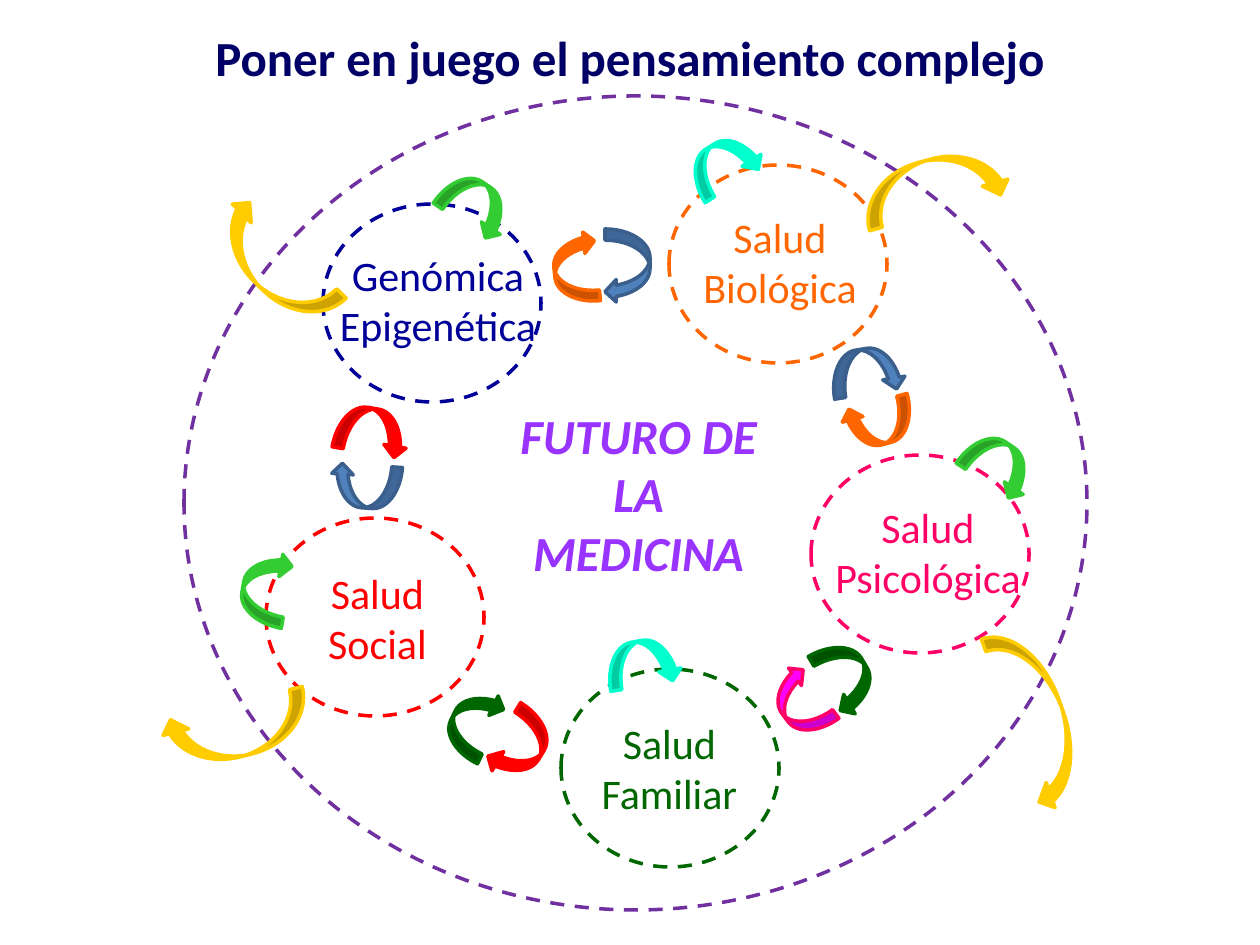
from dataclasses import dataclass

from pptx import Presentation
from pptx.dml.color import RGBColor
from pptx.enum.dml import MSO_LINE_DASH_STYLE as Dash
from pptx.enum.shapes import MSO_SHAPE as Shape
from pptx.enum.text import MSO_ANCHOR as Anchor, PP_ALIGN as Align
from pptx.util import Emu, Pt

PX = 914400 / 126


@dataclass(frozen=True)
class Theme:
    font: str = "Calibri"
    label_size: int = 24
    heading_size: int = 28
    line_width: int = 2
    title: str = "000066"
    center: str = "9933FF"
    outer: str = "7030A0"
    white: str = "FFFFFF"
    navy: str = "000099"
    orange: str = "FF6600"
    pink: str = "FF0066"
    red: str = "FF0000"
    dark_green: str = "006600"
    green: str = "33CC33"
    magenta: str = "FF00FF"
    blue: str = "4F81BD"
    blue_edge: str = "3A5F8C"
    cyan: str = "00FFCC"
    yellow: str = "FFCC00"


T = Theme()

# Health areas: lines, colour, circle corner, label box
CIRCLE = (218, 198)
AREAS = [
    (("Genómica", "Epigenética"), T.navy, (323, 204), (326, 243, 224, 115)),
    (("Salud", "Biológica"), T.orange, (669, 165), (690, 205, 180, 115)),
    (("Salud", "Psicológica"), T.pink, (811, 455), (822, 495, 212, 115)),
    (("Salud", "Social"), T.red, (266, 518), (315, 561, 125, 115)),
    (("Salud", "Familiar"), T.dark_green, (561, 669), (588, 711, 163, 115)),
]

# Arrows by size: left, top, rotation, fill, line
ARROWS = {
    # Outgoing half of each exchange, and the loops on the circles
    (45, 74): [
        (498, 709, 31.5, T.red, T.red),
        (824, 640, 329.4, T.dark_green, T.dark_green),
        (845, 334, 260.6, T.blue, T.blue_edge),
        (605, 229, 0, T.blue, T.blue_edge),
        (350, 394, 279.9, T.red, T.red),
        (454, 168, 303.8, T.green, T.green),
        (977, 428, 303.8, T.green, T.green),
        (243, 551, 189.9, T.green, T.green),
        (702, 127, 237.8, T.cyan, T.cyan),
        (621, 626, 260.2, T.cyan, T.cyan),
    ],
    # Returning half of each exchange
    (43, 71): [
        (452, 687, 205.7, T.dark_green, T.dark_green),
        (779, 667, 143.6, T.magenta, T.pink),
        (857, 388, 74.8, T.orange, T.orange),
        (554, 232, 174.2, T.orange, T.orange),
        (344, 451, 94.1, T.blue, T.blue_edge),
    ],
    # Arrows that leave the outer circle
    (53, 149): [
        (248, 190, 134.7, T.yellow, T.yellow),
        (210, 656, 75.8, T.yellow, T.yellow),
        (908, 111, 254.7, T.yellow, T.yellow),
    ],
    (53, 186): [(1011, 625, 340.5, T.yellow, T.yellow)],
}


def emu(*lengths):
    return [Emu(round(n * PX)) for n in lengths]


def rgb(color):
    return RGBColor.from_string(color)


def add_shape(slide, kind, box, fill=None, line=None):
    sp = slide.shapes.add_shape(kind, *emu(*box))
    sp.shadow.inherit = False
    if fill:
        sp.fill.solid()
        sp.fill.fore_color.rgb = rgb(fill)
    else:
        sp.fill.background()
    if line:
        sp.line.color.rgb = rgb(line)
        sp.line.width = Pt(T.line_width)
    else:
        sp.line.fill.background()
    return sp


def add_dashed_ellipse(slide, box, color):
    add_shape(slide, Shape.OVAL, box, line=color).line.dash_style = Dash.DASH


def add_arrow(slide, box, rotation, fill, line):
    add_shape(slide, Shape.CURVED_LEFT_ARROW, box, fill, line).rotation = rotation


def write(sp, lines, size, color, align=Align.CENTER, wrap=False, bold=False, italic=False):
    tf = sp.text_frame
    tf.word_wrap = wrap
    tf.vertical_anchor = Anchor.TOP
    tf.text = "\n".join(lines)
    for p in tf.paragraphs:
        p.alignment = align
        p.font.name = T.font
        p.font.size = Pt(size)
        p.font.bold = bold
        p.font.italic = italic
        p.font.color.rgb = rgb(color)


def add_text(slide, box, lines, size, color, **style):
    write(slide.shapes.add_textbox(*emu(*box)), lines, size, color, **style)


def main():
    prs = Presentation()
    prs.slide_width, prs.slide_height = emu(1260, 945)
    slide = prs.slides.add_slide(prs.slide_layouts[6])

    # Circles
    add_dashed_ellipse(slide, (184, 96, 903, 814), T.outer)
    for _, color, corner, _ in AREAS:
        add_dashed_ellipse(slide, corner + CIRCLE, color)

    # Labels and title
    for lines, color, _, box in AREAS:
        add_text(slide, box, lines, T.label_size, color)
    add_text(slide, (203, 21, 874, 72), ["Poner en juego el pensamiento complejo"],
             T.heading_size, T.title, align=Align.LEFT, bold=True)

    # Curved arrows
    for size, arrows in ARROWS.items():
        for left, top, rotation, fill, line in arrows:
            add_arrow(slide, (left, top) + size, rotation, fill, line)

    # Central theme
    center = add_shape(slide, Shape.RECTANGLE, (485, 399, 307, 190), fill=T.white)
    write(center, ["FUTURO DE LA", "MEDICINA"], T.heading_size, T.center,
          wrap=True, bold=True, italic=True)

    prs.save("out.pptx")


if __name__ == "__main__":
    main()
